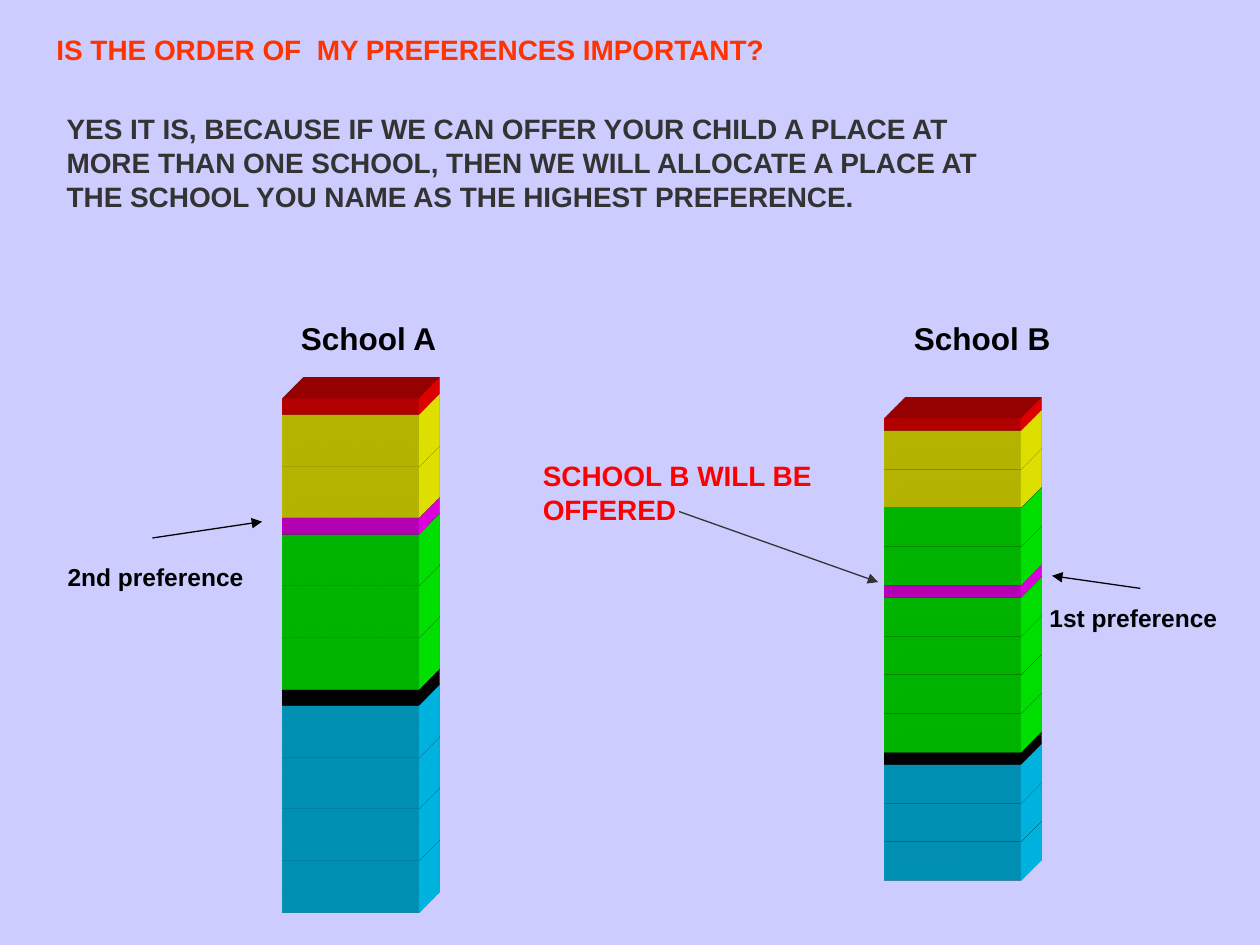
from dataclasses import dataclass

from lxml import etree
from pptx import Presentation
from pptx.dml.color import RGBColor
from pptx.enum.shapes import MSO_CONNECTOR, MSO_SHAPE
from pptx.enum.text import MSO_ANCHOR, PP_ALIGN
from pptx.oxml.ns import qn
from pptx.util import Inches, Pt


@dataclass(frozen=True)
class Theme:
    font = "Arial"
    background = "CCCCFF"
    title = "FF3300"
    body = "333333"
    answer = "FF0000"
    label = "000000"
    heading_size = 18
    text_size = 16
    note_size = 14
    line_width = 0.75
    depth = 0.47


THEME = Theme()
BLUE, BLACK, GREEN = "00CCFF", "000000", "00FF00"
MAGENTA, YELLOW, RED = "FF00FF", "FFFF00", "FF0000"
THIN_COLOURS = {BLACK, MAGENTA, RED}


def rgb(colour):
    return RGBColor.from_string(colour)


def apply_format(target, values):
    for name, value in values.items():
        setattr(target, name, value)


def add_text(shapes, box, text, size, colour, label_inset=None):
    """Bold text; with a top inset it is a label, centred on its box."""
    is_label = label_inset is not None
    frame = shapes.add_textbox(*map(Inches, box)).text_frame
    frame.word_wrap = not is_label
    if is_label:
        apply_format(frame, {
            "margin_left": 0, "margin_right": 0, "margin_bottom": 0,
            "margin_top": Inches(label_inset), "vertical_anchor": MSO_ANCHOR.MIDDLE,
        })
    paragraph = frame.paragraphs[0]
    paragraph.alignment = PP_ALIGN.CENTER if is_label else PP_ALIGN.LEFT
    run = paragraph.add_run()
    run.text = text
    apply_format(run.font, {"name": THEME.font, "size": Pt(size), "bold": True})
    run.font.color.rgb = rgb(colour)


def add_arrow(shapes, start, end, colour):
    arrow = shapes.add_connector(MSO_CONNECTOR.STRAIGHT, *map(Inches, start + end))
    arrow.line.color.rgb = rgb(colour)
    arrow.line.width = Pt(THEME.line_width)
    etree.SubElement(arrow.line._get_or_add_ln(), qn("a:tailEnd"), type="triangle")
    etree.SubElement(arrow._element.spPr, qn("a:effectLst"))


def extrude(shape, colour):
    """Give the shape depth towards the top right."""
    properties = shape._element.spPr
    scene = etree.SubElement(properties, qn("a:scene3d"))
    etree.SubElement(scene, qn("a:camera"), prst="legacyObliqueTopRight")
    etree.SubElement(scene, qn("a:lightRig"), rig="legacyFlat3", dir="b")
    solid = etree.SubElement(properties, qn("a:sp3d"), prstMaterial="legacyMatte",
                             extrusionH=str(Inches(THEME.depth)))
    for bevel in ("a:bevelT", "a:bevelB"):
        etree.SubElement(solid, qn(bevel), w="13500", h="13500", prst="angle")
    side = etree.SubElement(solid, qn("a:extrusionClr"))
    etree.SubElement(side, qn("a:srgbClr"), val=colour)


def add_block(shapes, box, colour):
    block = shapes.add_shape(MSO_SHAPE.RECTANGLE, *map(Inches, box))
    block.shadow.inherit = False
    block.fill.solid()
    block.fill.fore_color.rgb = rgb(colour)
    block.line.fill.background()
    extrude(block, colour)


def add_tower(shapes, box, colours, thin):
    """Stack solid blocks from the bottom of the box; thin bands have a set height."""
    left, top, width, height = box
    thin_count = sum(colour in THIN_COLOURS for colour in colours)
    thick = (height - thin_count * thin) / (len(colours) - thin_count)
    upper = top + height
    for colour in colours:
        block_height = thin if colour in THIN_COLOURS else thick
        upper -= block_height
        add_block(shapes, (left, upper, width, block_height), colour)


def add_school(slide, box, colours, thin, name, name_box, note, note_box, arrow):
    shapes = slide.shapes.add_group_shape().shapes
    add_tower(shapes, box, colours, thin)
    add_text(shapes, name_box, name, THEME.heading_size, THEME.label, 0.05)
    add_text(shapes, note_box, note, THEME.note_size, THEME.label, 0.1)
    add_arrow(shapes, *arrow, THEME.label)


def add_question(slide, title_box, body_box):
    add_text(slide.shapes, title_box, "IS THE ORDER OF  MY PREFERENCES IMPORTANT?",
             THEME.text_size, THEME.title)
    add_text(slide.shapes, body_box,
             "YES IT IS, BECAUSE IF WE CAN OFFER YOUR CHILD A PLACE AT MORE THAN ONE "
             "SCHOOL, THEN WE WILL ALLOCATE A PLACE AT THE SCHOOL YOU NAME AS THE "
             "HIGHEST PREFERENCE.", THEME.text_size, THEME.body)


def add_answer(slide, box, arrow):
    add_arrow(slide.shapes, *arrow, THEME.body)
    add_text(slide.shapes, box, "SCHOOL B WILL BE OFFERED",
             THEME.text_size, THEME.answer)


def main():
    presentation = Presentation()
    apply_format(presentation, {"slide_width": Inches(10), "slide_height": Inches(7.5)})
    slide = presentation.slides.add_slide(presentation.slide_layouts[6])
    slide.background.fill.solid()
    slide.background.fill.fore_color.rgb = rgb(THEME.background)

    add_school(
        slide, (2.24, 3.16, 1.08, 4.08),
        [BLUE] * 4 + [BLACK] + [GREEN] * 3 + [MAGENTA] + [YELLOW] * 2 + [RED], 0.13,
        "School A", (2.32, 2.49, 1.21, 0.34),
        "2nd preference", (0.49, 4.41, 1.49, 0.23), ((1.21, 4.27), (2.08, 4.14)))
    add_school(
        slide, (7.02, 3.32, 1.08, 3.67),
        [BLUE] * 3 + [BLACK] + [GREEN] * 4 + [MAGENTA] + [GREEN] * 2
        + [YELLOW] * 2 + [RED], 0.1,
        "School B", (7.19, 2.49, 1.21, 0.34),
        "1st preference", (8.25, 4.74, 1.49, 0.23), ((9.05, 4.67), (8.35, 4.57)))
    add_question(slide, (0.35, 0.21, 8.66, 0.37), (0.43, 0.84, 7.72, 0.9))
    add_answer(slide, (4.21, 3.59, 2.76, 0.64), ((5.39, 4.06), (6.97, 4.62)))
    presentation.save("out.pptx")


if __name__ == "__main__":
    main()
